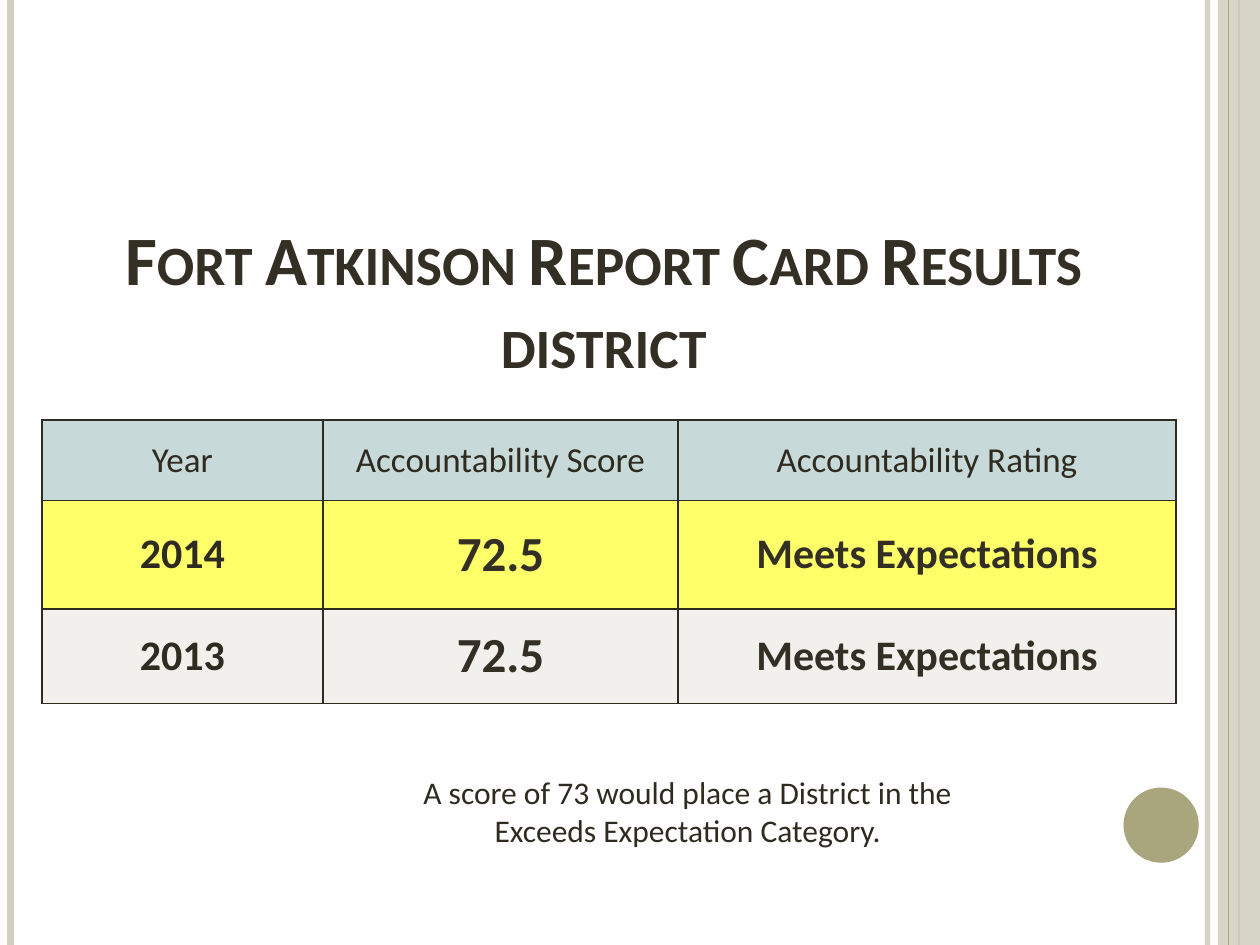
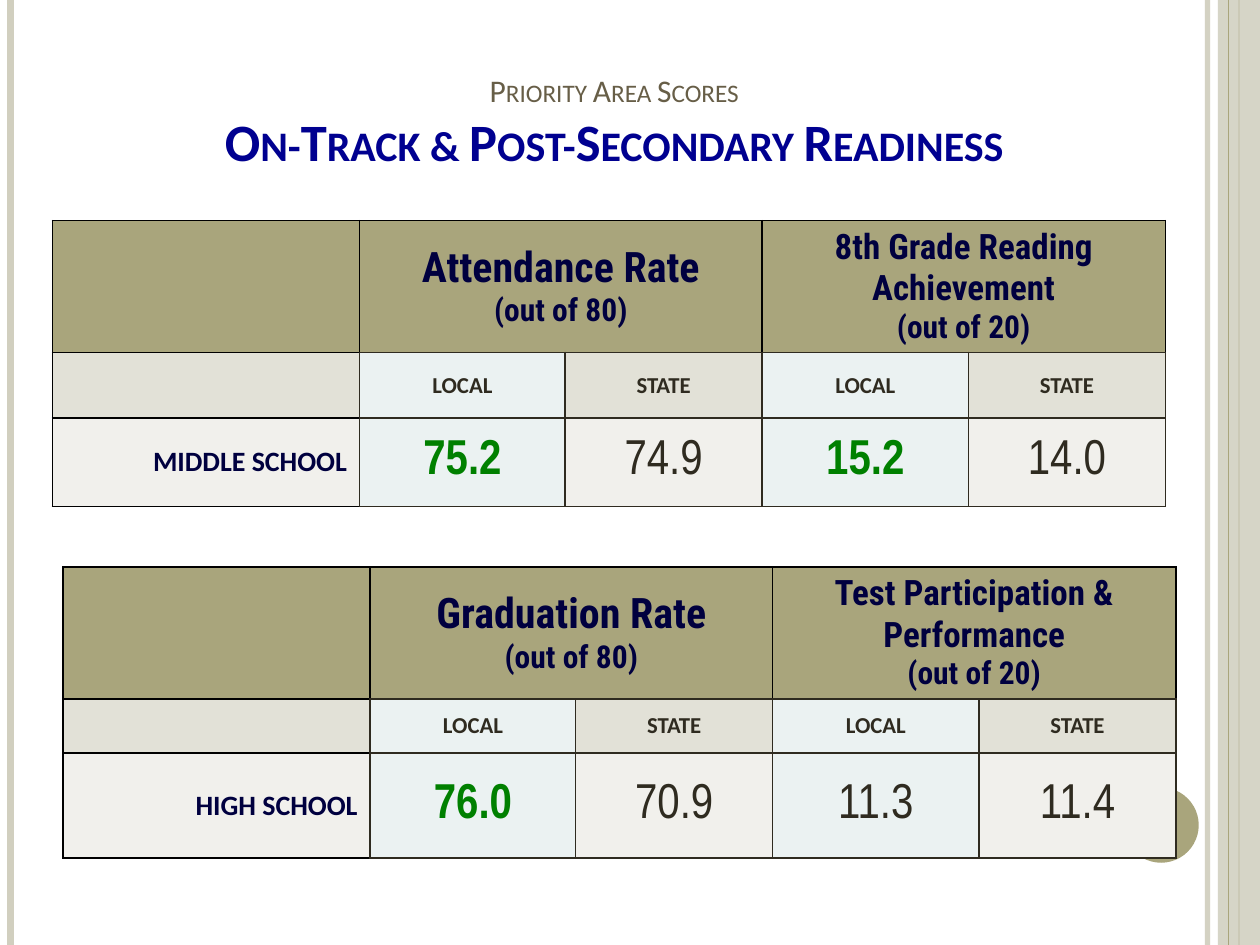
from dataclasses import dataclass

from lxml import etree
from pptx import Presentation
from pptx import util as u
from pptx.dml.color import RGBColor
from pptx.enum import shapes, text
from pptx.oxml import ns

Pt = u.Pt
CENTER, RIGHT = text.PP_ALIGN.CENTER, text.PP_ALIGN.RIGHT


@dataclass(frozen=True)
class Theme:
    ink: str = "2F2B20"
    title: str = "342F24"
    subtitle: str = "675E47"
    blue: str = "000090"
    navy: str = "00003F"
    green: str = "008000"
    black: str = "000000"
    khaki: str = "A9A57C"
    sand: str = "D1CFBF"
    teal: str = "C4D8D7"
    yellow: str = "FFFF00"
    pale: str = "F1F0EC"
    stone: str = "E2E1D7"
    mist: str = "EBF2F2"
    body_font: str = "Calibri"
    header_font: str = "Roboto Condensed"
    score_font: str = "Arial Narrow"
    title_size: float = 39.6
    topic_size: float = 30
    score_size: float = 28
    large: float = 24
    medium: float = 20
    normal: float = 18
    label: float = 16
    small: float = 13


def set_all(target, values):
    for name, value in values.items():
        setattr(target, name, value)


def set_alpha(element, percent):
    if percent < 100:
        for color in element.iter(ns.qn("a:srgbClr")):
            etree.SubElement(color, ns.qn("a:alpha"), val=str(percent * 1000))


class Deck:
    def __init__(self, theme):
        self.theme = theme
        self.presentation = Presentation()
        set_all(self.presentation, {"slide_width": Pt(720), "slide_height": Pt(540)})
        self.slide = None

    def style(self, size, color=None, font=None, bold=False):
        return {"size": Pt(size), "name": font or self.theme.body_font,
                "bold": bold, "color": color or self.theme.ink}

    def add_slide(self):
        t = self.theme
        self.slide = self.presentation.slides.add_slide(self.presentation.slide_layouts[5])
        self.rule(690, t.sand, 3, 93)
        self.rule(6, t.sand, 4.5)
        self.rule(708, t.khaki, 1.5)
        self.shape(shapes.MSO_SHAPE.RECTANGLE, (696, 0, 24, 540), t.sand, 87)
        self.rule(702, t.khaki, 0.75)
        self.shape(shapes.MSO_SHAPE.OVAL, (642, 450, 43, 43), t.khaki)

    def rule(self, x, color, width, alpha=100):
        line = self.slide.shapes.add_connector(
            shapes.MSO_CONNECTOR.STRAIGHT, Pt(x), 0, Pt(x), Pt(540))
        line.line.width = Pt(width)
        line.line.color.rgb = RGBColor.from_string(color)
        properties = line._element.spPr
        set_alpha(properties, alpha)
        etree.SubElement(properties, ns.qn("a:effectLst"))

    def shape(self, kind, box, color, alpha=100):
        shape = self.slide.shapes.add_shape(kind, *map(Pt, box))
        shape.shadow.inherit = False
        shape.fill.solid()
        shape.fill.fore_color.rgb = RGBColor.from_string(color)
        shape.line.fill.background()
        set_alpha(shape._element.spPr, alpha)

    def run(self, paragraph, words, style):
        run = paragraph.add_run()
        run.text = words
        set_all(run.font, {k: v for k, v in style.items() if k != "color"})
        run.font.color.rgb = RGBColor.from_string(style["color"])
        return run

    def title(self, box, lines):
        title = self.slide.shapes.title
        set_all(title, dict(zip(("left", "top", "width", "height"), map(Pt, box))))
        set_all(title.text_frame, {"vertical_anchor": text.MSO_ANCHOR.BOTTOM,
                                   "word_wrap": True,
                                   "auto_size": text.MSO_AUTO_SIZE.NONE})
        paragraph = title.text_frame.paragraphs[0]
        paragraph.alignment = CENTER
        for index, (words, style) in enumerate(lines):
            if index:
                paragraph.add_line_break()
            run = self.run(paragraph, words, style)
            run._r.get_or_add_rPr().set("cap", "small")

    def note(self, box, words):
        frame = self.slide.shapes.add_textbox(*map(Pt, box)).text_frame
        set_all(frame, {"word_wrap": True,
                        "auto_size": text.MSO_AUTO_SIZE.SHAPE_TO_FIT_TEXT})
        frame.paragraphs[0].alignment = CENTER
        self.run(frame.paragraphs[0], words, self.style(self.theme.normal))

    def table(self, left, top, columns, rows):
        frame = self.slide.shapes.add_table(
            len(rows), len(columns), Pt(left), Pt(top),
            Pt(sum(columns)), Pt(sum(rows)))
        table = frame.table
        set_all(table, {"first_row": False, "horz_banding": False})
        for column, width in zip(table.columns, columns):
            column.width = Pt(width)
        for row, height in zip(table.rows, rows):
            row.height = Pt(height)
        return table

    def cell(self, cell, fill, lines=(), alpha=100, align=CENTER, border=None):
        cell.vertical_anchor = text.MSO_ANCHOR.MIDDLE
        cell.fill.solid()
        cell.fill.fore_color.rgb = RGBColor.from_string(fill)
        properties = cell._tc.get_or_add_tcPr()
        set_alpha(properties, alpha)
        for index, side in enumerate("LRTB"):
            line = etree.Element(ns.qn(f"a:ln{side}"), w=str(Pt(1)))
            paint = etree.SubElement(line, ns.qn("a:solidFill"))
            etree.SubElement(paint, ns.qn("a:srgbClr"), val=border or self.theme.ink)
            properties.insert(index, line)
        frame = cell.text_frame
        for index, (words, style) in enumerate(lines):
            paragraph = frame.add_paragraph() if index else frame.paragraphs[0]
            paragraph.alignment = align
            self.run(paragraph, words, style)

    def results_table(self, headings, results):
        t = self.theme
        table = self.table(24, 240, (160.5, 203, 284.5), (46, 62, 54))
        for column, heading in enumerate(headings):
            self.cell(table.cell(0, column), t.teal,
                      [(heading, self.style(t.medium))], 94)
        styles = (self.style(t.large, bold=True),
                  self.style(t.score_size, t.title, bold=True),
                  self.style(t.large, t.title, bold=True))
        fills = ((t.yellow, 59), (t.pale, 100))
        for row, (result, (fill, alpha)) in enumerate(zip(results, fills), 1):
            for column, line in enumerate(zip(result, styles)):
                self.cell(table.cell(row, column), fill, [line], alpha)

    def priority_table(self, left, top, rows, school, measures):
        t = self.theme
        table = self.table(left, top, (175.5, 117.5, 112.5, 118, 112.5), rows)
        for row, fill in enumerate((t.khaki, t.stone)):
            self.cell(table.cell(row, 0), fill, border=t.black)
        self.cell(table.cell(2, 0), t.pale,
                  [(school, self.style(t.label, t.navy, bold=True))],
                  align=RIGHT, border=t.black)
        for index, (measure, size, limit, local, state) in enumerate(measures):
            column = 1 + 2 * index
            heading = table.cell(0, column)
            heading.merge(table.cell(0, column + 1))
            self.cell(heading, t.khaki, [
                (words, self.style(points, t.navy, t.header_font, True))
                for words, points in ((measure, size), (limit, t.normal))],
                border=t.black)
            ahead = local > state
            sides = (("LOCAL", local, t.mist, t.mist, ahead),
                     ("STATE", state, t.stone, t.pale, False))
            for offset, (side, score, label_fill, score_fill, leads) in enumerate(sides):
                self.cell(table.cell(1, column + offset), label_fill,
                          [(side, self.style(t.small, bold=True))])
                score_style = self.style(t.score_size, t.green if leads else t.ink,
                                         t.score_font, leads)
                self.cell(table.cell(2, column + offset), score_fill,
                          [(f"{score:.1f}", score_style)])


def main():
    theme = Theme()
    deck = Deck(theme)

    deck.add_slide()
    district_title = deck.style(theme.title_size, theme.title, bold=True)
    deck.title((30, 132, 630, 90), [
        ("Fort Atkinson Report Card Results", district_title),
        ("district", district_title)])
    deck.results_table(
        ("Year", "Accountability Score", "Accountability Rating"),
        (("2014", "72.5", "Meets Expectations"),
         ("2013", "72.5", "Meets Expectations")))
    deck.note((216, 438, 354, 51),
              "A score of 73 would place a District in the Exceeds Expectation Category.")

    deck.add_slide()
    deck.title((36, 21.5, 630, 80.5), [
        ("Priority Area Scores", deck.style(theme.normal, theme.subtitle)),
        ("On-Track & Post-Secondary Readiness",
         deck.style(theme.topic_size, theme.blue, bold=True))])
    deck.priority_table(30, 126, (66, 37.5, 50.5), "MIDDLE SCHOOL", (
        ("Attendance Rate", theme.large, "(out of 80)", 75.2, 74.9),
        ("8th Grade Reading Achievement", theme.medium, "(out of 20)", 15.2, 14.0)))
    deck.priority_table(36, 324, (66, 31, 60), "HIGH SCHOOL", (
        ("Graduation Rate", theme.large, "(out of 80)", 76.0, 70.9),
        ("Test Participation & Performance", theme.medium, "(out of 20)", 11.3, 11.4)))

    deck.presentation.save("out.pptx")


if __name__ == "__main__":
    main()
